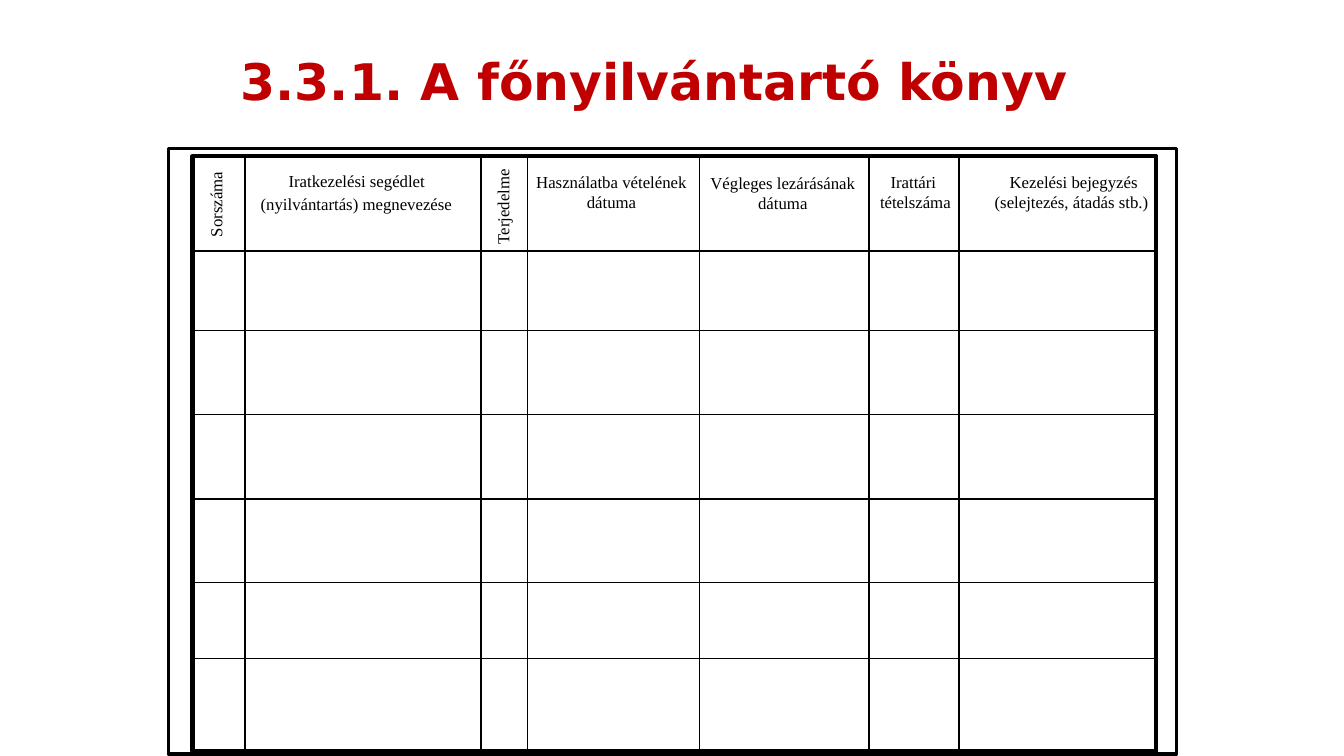
from itertools import accumulate

from lxml.etree import SubElement
from pptx import Presentation
from pptx.dml.color import RGBColor
from pptx.enum.shapes import MSO_CONNECTOR, MSO_SHAPE
from pptx.enum.text import MSO_ANCHOR, MSO_AUTO_SIZE, PP_ALIGN
from pptx.oxml.ns import qn
from pptx.util import Inches, Pt

BLACK, WHITE, RED = "000000", "FFFFFF", "C00000"
COLUMN_WIDTHS = [0.52, 2.34, 0.46, 1.71, 1.68, 0.89, 1.96]
ROW_HEIGHTS = [0.94, 0.79, 0.83, 0.84, 0.83, 0.75, 0.92]

HEADINGS = [
    ((-0.26, 0.26, 0.98, 0.3), 270, PP_ALIGN.LEFT, [[("Sorszáma", 12)]]),
    ((0.26, 0.09, 2.78, 0.54), 0, PP_ALIGN.CENTER,
     [[("Iratkezelési segédlet ", 12)],
      [("(nyilvántartás) megnevezése", 12), (" ", 14)]]),
    ((2.54, 0.33, 1.07, 0.3), 269.8, PP_ALIGN.CENTER, [[("Terjedelme ", 12)]]),
    ((3.28, 0.1, 1.75, 0.5), 0, PP_ALIGN.CENTER,
     [[("Használatba vételének", 12)], [(" dátuma ", 12)]]),
    ((5.02, 0.11, 1.67, 0.5), 0, PP_ALIGN.CENTER,
     [[("Végleges lezárásának", 12)], [(" dátuma ", 12)]]),
    ((6.67, 0.1, 1, 0.5), 0, PP_ALIGN.CENTER,
     [[("Irattári ", 12)], [("tételszáma", 12)]]),
    ((7.84, 0.1, 1.8, 0.5), 0, PP_ALIGN.CENTER,
     [[("Kezelési bejegyzés", 12)], [("(selejtezés, átadás stb.) ", 12)]]),
]


def color(hex_code):
    return RGBColor.from_string(hex_code)


def add_text(page, box, lines, font, hex_code, align, bold=False):
    label = page.shapes.add_textbox(*map(Inches, box))
    frame = label.text_frame
    frame.word_wrap = True
    for index, spans in enumerate(lines):
        para = frame.add_paragraph() if index else frame.paragraphs[0]
        para.alignment = align
        for text, size in spans:
            span = para.add_run()
            span.text = text
            span.font.name = font
            span.font.size = Pt(size)
            span.font.bold = bold
            span.font.color.rgb = color(hex_code)
    return label


def add_frame(page, box, weight, fill=None):
    frame = page.shapes.add_shape(MSO_SHAPE.RECTANGLE, *map(Inches, box))
    frame.shadow.inherit = False
    if fill:
        frame.fill.solid()
        frame.fill.fore_color.rgb = color(fill)
    else:
        frame.fill.background()
    frame.line.color.rgb = color(BLACK)
    frame.line.width = Pt(weight)


def add_rule(page, *ends):
    rule = page.shapes.add_connector(MSO_CONNECTOR.STRAIGHT, *map(Inches, ends))
    rule.line.color.rgb = color(BLACK)
    rule.line.width = Pt(1)
    SubElement(rule._element.spPr, qn("a:effectLst"))


def add_headings(page, left, top):
    for (x, y, width, height), angle, align, lines in HEADINGS:
        label = add_text(page, (left + x, top + y, width, height), lines,
                         "Times New Roman", BLACK, align)
        label.text_frame.auto_size = MSO_AUTO_SIZE.SHAPE_TO_FIT_TEXT
        label.rotation = angle


def add_grid(page, box):
    left, top, width, height = box
    add_frame(page, box, 3)
    for x in accumulate(COLUMN_WIDTHS[:-1], initial=left):
        if x > left:
            add_rule(page, x, top + height, x, top)
    for y in accumulate(ROW_HEIGHTS[:-1], initial=top):
        if y > top:
            add_rule(page, left, y, left + width, y)


def add_register(page, box):
    left, top, width, height = box
    add_frame(page, box, 2.25, WHITE)
    grid_left, grid_top = left + 0.24, top + 0.08
    add_headings(page, grid_left, grid_top)
    add_grid(page, (grid_left, grid_top, sum(COLUMN_WIDTHS), sum(ROW_HEIGHTS)))


def add_title(page, box):
    title = add_text(page, box, [[("3.3.1. A főnyilvántartó könyv", 36)]],
                     "DejaVu Sans", RED, PP_ALIGN.CENTER, bold=True)
    title.text_frame.vertical_anchor = MSO_ANCHOR.MIDDLE


def main():
    deck = Presentation()
    deck.slide_width, deck.slide_height = Inches(13.33), Inches(7.5)
    page = deck.slides.add_slide(deck.slide_layouts[6])
    page.background.fill.solid()
    page.background.fill.fore_color.rgb = color(WHITE)
    add_register(page, (1.67, 1.47, 10, 6.01))
    add_title(page, (1.99, 0.12, 9, 1.35))
    deck.save("out.pptx")


if __name__ == "__main__":
    main()
